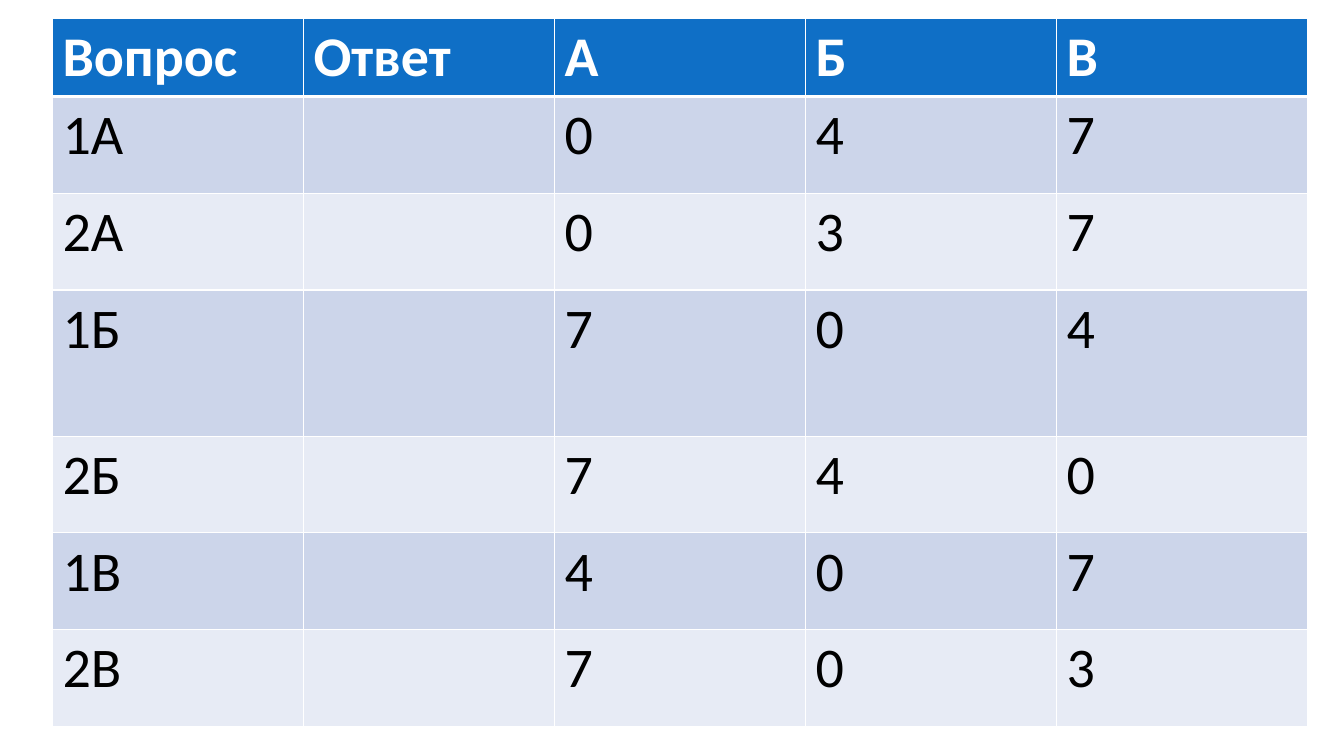
import pptx
import pptx.dml.color
import pptx.util
from dataclasses import dataclass
from lxml import etree
from pptx.oxml.ns import qn

Inches = pptx.util.Inches


@dataclass(frozen=True)
class Theme:
    font: str = "Calibri"
    text_size: int = 40
    header_fill: str = "0F6FC6"
    header_text: str = "FFFFFF"
    body_fills: tuple = ("CCD5EA", "E7EBF5")
    body_text: str = "000000"
    border: str = "FFFFFF"
    thin: int = 1
    thick: int = 3


class SlideBuilder:
    def __init__(self, slide, theme):
        self.slide = slide
        self.theme = theme

    def table(self, rows, left, top, column_width, row_heights):
        column_count = len(rows[0])
        frame = self.slide.shapes.add_table(
            len(rows), column_count, Inches(left), Inches(top),
            Inches(column_width * column_count), Inches(sum(row_heights)))
        grid = frame.table
        for column in grid.columns:
            column.width = Inches(column_width)
        for row_index, (values, height) in enumerate(zip(rows, row_heights)):
            grid.rows[row_index].height = Inches(height)
            for column_index, value in enumerate(values):
                self.cell(grid.cell(row_index, column_index), value, row_index)

    def cell(self, cell, value, row_index):
        theme = self.theme
        is_header = row_index == 0
        self.borders(cell,
                     top=theme.thick if row_index == 1 else theme.thin,
                     bottom=theme.thick if is_header else theme.thin)
        fill = theme.header_fill if is_header else theme.body_fills[(row_index - 1) % 2]
        cell.fill.solid()
        cell.fill.fore_color.rgb = pptx.dml.color.RGBColor.from_string(fill)
        if value:
            run = cell.text_frame.paragraphs[0].add_run()
            run.text = value
            run.font.name = theme.font
            run.font.size = pptx.util.Pt(theme.text_size)
            run.font.bold = is_header
            run.font.color.rgb = pptx.dml.color.RGBColor.from_string(
                theme.header_text if is_header else theme.body_text)

    def borders(self, cell, top, bottom):
        properties = cell._tc.get_or_add_tcPr()
        widths = {"a:lnL": self.theme.thin, "a:lnR": self.theme.thin,
                  "a:lnT": top, "a:lnB": bottom}
        for side, width in widths.items():
            line = etree.SubElement(properties, qn(side), w=str(pptx.util.Pt(width)))
            line_fill = etree.SubElement(line, qn("a:solidFill"))
            etree.SubElement(line_fill, qn("a:srgbClr"), val=self.theme.border)


def main():
    deck = pptx.Presentation()
    deck.slide_width, deck.slide_height = Inches(13.33), Inches(7.5)
    builder = SlideBuilder(deck.slides.add_slide(deck.slide_layouts[6]), Theme())

    # Answer key: points for each choice, with a blank column to fill in
    answer_key = [
        ("Вопрос", "Ответ", "А", "Б", "В"),
        ("1А", "", "0", "4", "7"),
        ("2А", "", "0", "3", "7"),
        ("1Б", "", "7", "0", "4"),
        ("2Б", "", "7", "4", "0"),
        ("1В", "", "4", "0", "7"),
        ("2В", "", "7", "0", "3"),
    ]
    header_height, row_height, tall_height = 0.77, 0.96, 1.45
    row_heights = [header_height] + [
        tall_height if row[0] == "1Б" else row_height for row in answer_key[1:]]
    builder.table(answer_key, left=0.52, top=0.18, column_width=2.49,
                  row_heights=row_heights)

    deck.save("out.pptx")


if __name__ == "__main__":
    main()
